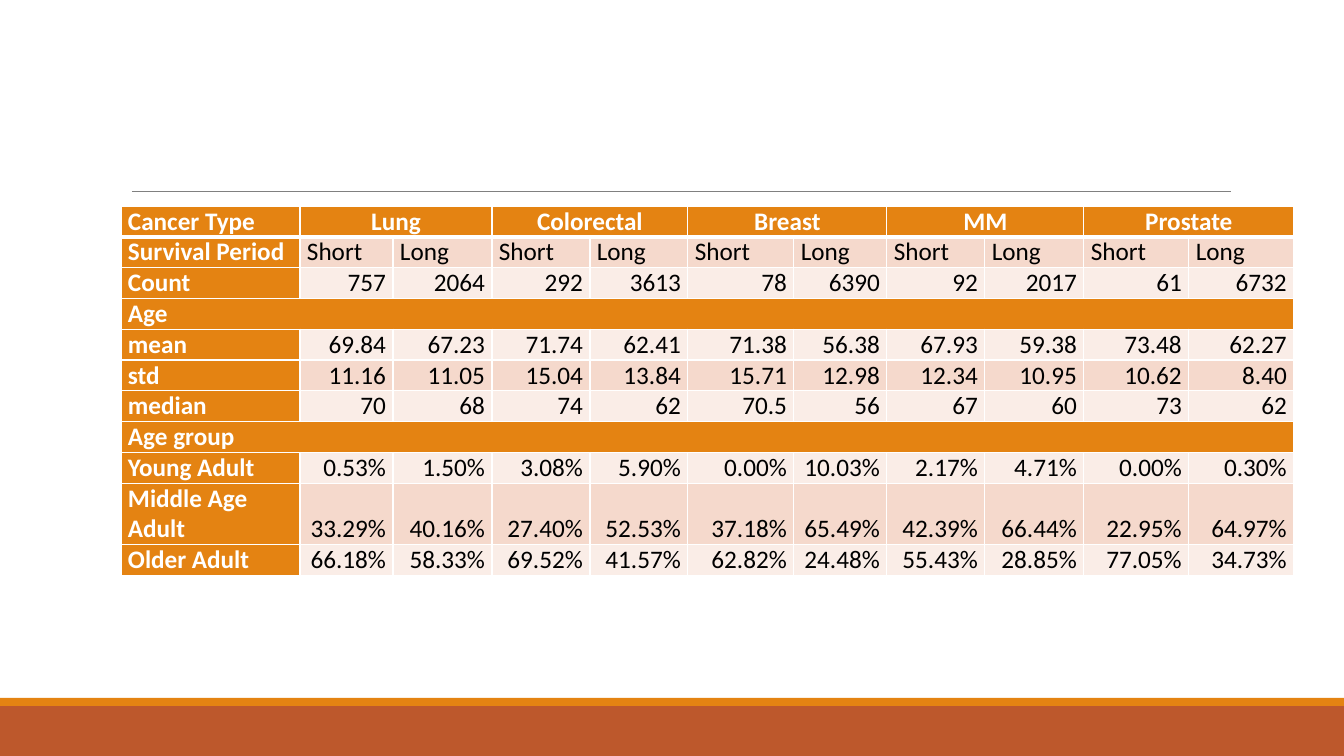
"""Build a slide with a table of patient ages by cancer type and survival period."""
from lxml import etree
from pptx import Presentation
from pptx.dml.color import RGBColor
from pptx.enum.shapes import MSO_CONNECTOR, MSO_SHAPE
from pptx.enum.text import MSO_ANCHOR, PP_ALIGN
from pptx.oxml.ns import qn
from pptx.util import Pt

LEFT, CENTER, RIGHT = PP_ALIGN.LEFT, PP_ALIGN.CENTER, PP_ALIGN.RIGHT
BOTTOM = MSO_ANCHOR.BOTTOM
RECTANGLE = MSO_SHAPE.RECTANGLE
STRAIGHT = MSO_CONNECTOR.STRAIGHT

CANCER_TYPES = ["Lung", "Colorectal", "Breast", "MM", "Prostate"]
PERIODS = ["Short", "Long"]
STATISTICS = [
    ("Count", "757 2064 292 3613 78 6390 92 2017 61 6732"),
    ("Age", ""),
    ("mean", "69.84 67.23 71.74 62.41 71.38 56.38 67.93 59.38 73.48 62.27"),
    ("std", "11.16 11.05 15.04 13.84 15.71 12.98 12.34 10.95 10.62 8.40"),
    ("median", "70 68 74 62 70.5 56 67 60 73 62"),
    ("Age group", ""),
    ("Young Adult", "0.53% 1.50% 3.08% 5.90% 0.00% 10.03% 2.17% 4.71% 0.00% 0.30%"),
    ("Middle Age Adult", "33.29% 40.16% 27.40% 52.53% 37.18% 65.49% 42.39% 66.44% 22.95% 64.97%"),
    ("Older Adult", "66.18% 58.33% 69.52% 41.57% 62.82% 24.48% 55.43% 28.85% 77.05% 34.73%"),
]
COLUMN_WIDTHS = [179, 93, 99, 98, 98, 106, 93, 98, 99, 105, 105]
ROW_HEIGHT = 20
TABLE_LEFT, TABLE_TOP, TABLE_HEIGHT = 121, 206, 363
SLIDE_WIDTH, SLIDE_HEIGHT = 1344, 756
FOOTER_BANDS = [("rust", 706, 50), ("orange", 698, 8)]
RULE_LEFT, RULE_RIGHT, RULE_TOP = 132, 1231, 191
CELL_INSET = 7
COLORS = {
    "orange": "E48312", "rust": "BD582C", "rule": "808080", "white": "FFFFFF",
    "black": "000000", "dark_band": "F5D9CC", "light_band": "FAEDE7",
}


def px(length):
    return round(length * 914400 / 100.8)


def color(name):
    return RGBColor.from_string(COLORS[name])


def add_border(cell, side, points):
    properties = cell._tc.get_or_add_tcPr()
    border = etree.SubElement(properties, qn(f"a:ln{side}"), w=str(Pt(points)))
    fill = etree.SubElement(border, qn("a:solidFill"))
    etree.SubElement(fill, qn("a:srgbClr"), val=COLORS["white"])


def fill_cell(cell, row, text, align, fill, ink):
    for side in "LRTB":
        thick = (row, side) in [(0, "B"), (1, "T")]
        add_border(cell, side, 3 if thick else 1)
    cell.fill.solid()
    cell.fill.fore_color.rgb = color(fill)
    cell.vertical_anchor = BOTTOM
    cell.margin_left = cell.margin_right = px(CELL_INSET)
    cell.margin_top = cell.margin_bottom = 0
    if text:
        paragraph = cell.text_frame.paragraphs[0]
        paragraph.alignment = align
        run = paragraph.add_run()
        run.text = text
        run.font.name = "Calibri"
        run.font.size = Pt(18)
        run.font.bold = ink == "white"
        run.font.color.rgb = color(ink)


def add_statistics_table(slide):
    columns = len(COLUMN_WIDTHS)
    header = [label for cancer in CANCER_TYPES for label in (cancer, "")]
    rows = [("Cancer Type", header), ("Survival Period", PERIODS * len(CANCER_TYPES))]
    rows += [(label, values.split()) for label, values in STATISTICS]
    frame = slide.shapes.add_table(
        len(rows), columns, px(TABLE_LEFT), px(TABLE_TOP),
        px(sum(COLUMN_WIDTHS)), px(TABLE_HEIGHT))
    table = frame.table
    for column, width in zip(table.columns, COLUMN_WIDTHS):
        column.width = px(width)
    for r, (label, values) in enumerate(rows):
        table.rows[r].height = px(ROW_HEIGHT)
        is_section = not values
        band = "dark_band" if r % 2 else "light_band"
        value_align = {0: CENTER, 1: LEFT}.get(r, RIGHT)
        for c, text in enumerate([label] + (values or [""] * (columns - 1))):
            is_heading = r == 0 or c == 0 or is_section
            fill_cell(table.cell(r, c), r, text, value_align if c else LEFT,
                      "orange" if is_heading else band,
                      "white" if is_heading else "black")
        if is_section:
            table.cell(r, 0).merge(table.cell(r, columns - 1))
    for c in range(1, columns, len(PERIODS)):
        table.cell(0, c).merge(table.cell(0, c + len(PERIODS) - 1))
    frame.height = px(TABLE_HEIGHT)


def main():
    deck = Presentation()
    deck.slide_width, deck.slide_height = px(SLIDE_WIDTH), px(SLIDE_HEIGHT)
    slide = deck.slides.add_slide(deck.slide_layouts[6])
    for name, top, height in FOOTER_BANDS:
        band = slide.shapes.add_shape(RECTANGLE, 0, px(top), px(SLIDE_WIDTH), px(height))
        band.shadow.inherit = False
        band.fill.solid()
        band.fill.fore_color.rgb = color(name)
        band.line.fill.background()
    rule = slide.shapes.add_connector(
        STRAIGHT, px(RULE_LEFT), px(RULE_TOP), px(RULE_RIGHT), px(RULE_TOP))
    rule.line.color.rgb = color("rule")
    rule.line.width = Pt(0.5)
    etree.SubElement(rule._element.spPr, qn("a:effectLst"))
    add_statistics_table(slide)
    deck.save("out.pptx")


if __name__ == "__main__":
    main()
